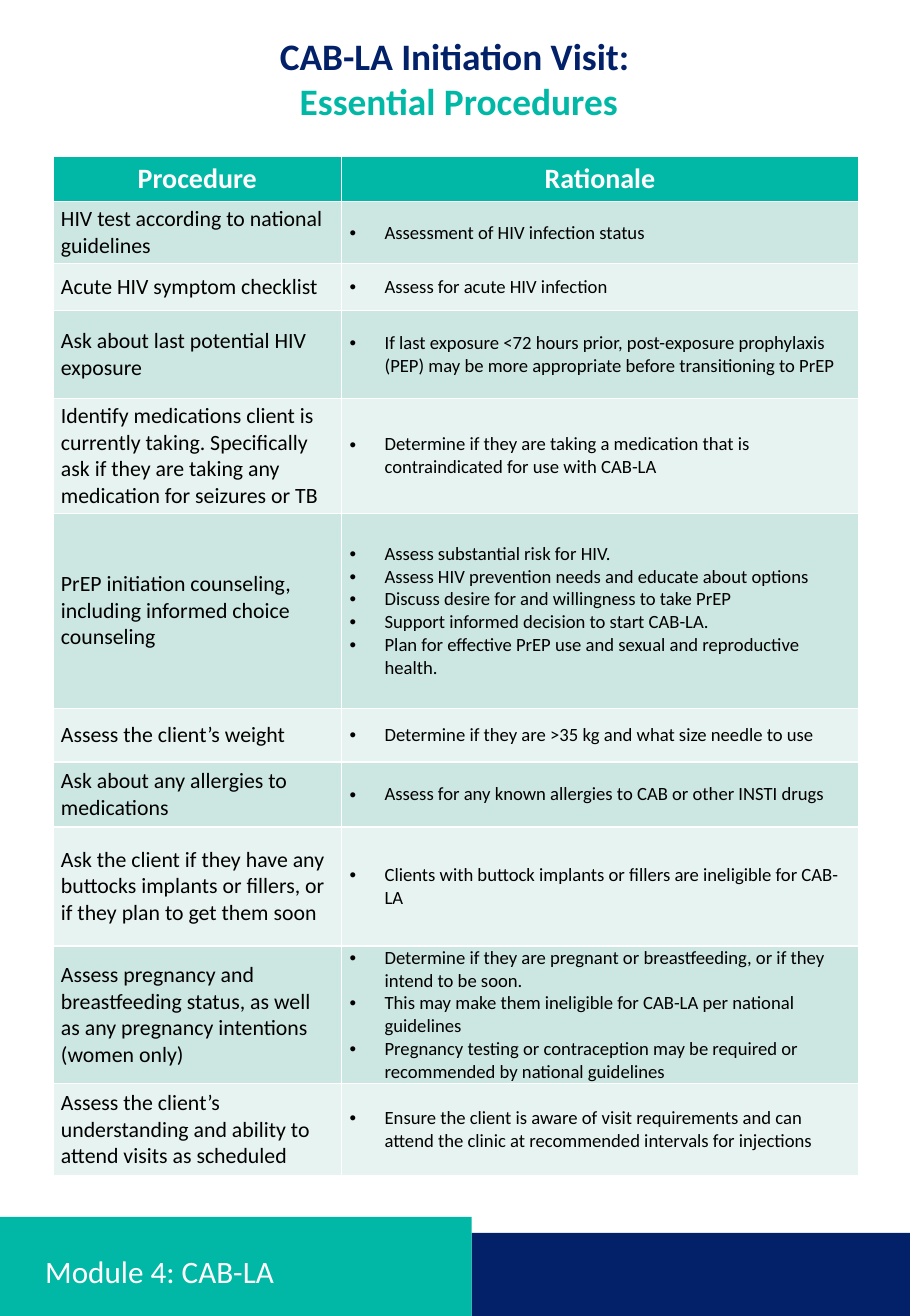
from pptx import Presentation
from pptx import util as u
from pptx.dml.color import RGBColor
from pptx.enum import shapes, text
from pptx.oxml.ns import qn
from lxml import etree

EMU_PER_PX = 914400 / 112.1
SLIDE_SIZE = u.Emu(7429500), u.Emu(10744200)  # 8 1/8 by 11 3/4 inches
FOOTER_BOTTOM = 1318
FONT = "Calibri"

NAVY = RGBColor(0x02, 0x21, 0x69)
TEAL = RGBColor(0x00, 0xB8, 0xA5)
BANDS = (RGBColor(0xCC, 0xE6, 0xE1), RGBColor(0xE7, 0xF3, 0xF0))
WHITE = RGBColor(0xFF, 0xFF, 0xFF)
BLACK = RGBColor(0x00, 0x00, 0x00)

HEADER_HEIGHT = 46
COLUMN_WIDTHS = (289, 517)
BULLET_INDENT = 35
CELL_MARGIN_X, CELL_MARGIN_Y = 8, 4

# Row height, procedure, rationale bullets
PROCEDURES = [
    (62, "HIV test according to national guidelines",
     ["Assessment of HIV infection status"]),
    (47, "Acute HIV symptom checklist",
     ["Assess for acute HIV infection"]),
    (88, "Ask about last potential HIV exposure",
     ["If last exposure <72 hours prior, post-exposure prophylaxis (PEP) "
      "may be more appropriate before transitioning to PrEP"]),
    (115, "Identify medications client is currently taking. Specifically ask "
          "if they are taking any medication for seizures or TB",
     ["Determine if they are taking a medication that is contraindicated "
      "for use with CAB-LA"]),
    (195, "PrEP initiation counseling, including informed choice counseling",
     ["Assess substantial risk for HIV.",
      "Assess HIV prevention needs and educate about options",
      "Discuss desire for and willingness to take PrEP",
      "Support informed decision to start CAB-LA.",
      "Plan for effective PrEP use and sexual and reproductive health."]),
    (54, "Assess the client’s weight",
     ["Determine if they are >35 kg and what size needle to use"]),
    (65, "Ask about any allergies to medications",
     ["Assess for any known allergies to CAB or other INSTI drugs"]),
    (119, "Ask the client if they have any buttocks implants or fillers, "
          "or if they plan to get them soon",
     ["Clients with buttock implants or fillers are ineligible for CAB-LA"]),
    (138, "Assess pregnancy and breastfeeding status, as well as any "
          "pregnancy intentions (women only)",
     ["Determine if they are pregnant or breastfeeding, or if they intend "
      "to be soon.",
      "This may make them ineligible for CAB-LA per national guidelines",
      "Pregnancy testing or contraception may be required or recommended "
      "by national guidelines"]),
    (92, "Assess the client’s understanding and ability to attend visits "
         "as scheduled",
     ["Ensure the client is aware of visit requirements and can attend the "
      "clinic at recommended intervals for injections"]),
]


def px(length):
    return u.Emu(round(length * EMU_PER_PX))


def style(para, size, color, bold=False, align=text.PP_ALIGN.LEFT):
    para.alignment = align
    font = para.font
    font.name, font.size, font.bold = FONT, u.Pt(size), bold
    font.color.rgb = color


def add_bullet(para):
    props = para._p.get_or_add_pPr()
    props.set("marL", str(px(BULLET_INDENT)))
    props.set("indent", str(-px(BULLET_INDENT)))
    etree.SubElement(props, qn("a:buFont")).set("typeface", "Arial")
    etree.SubElement(props, qn("a:buChar")).set("char", "•")


def add_bar(page, color, left, top, width):
    """Footer bar that reaches down to the slide's bottom edge."""
    bar = page.shapes.add_shape(shapes.MSO_SHAPE.RECTANGLE, px(left), px(top),
                                px(width), px(FOOTER_BOTTOM - top))
    bar.shadow.inherit = False
    bar.fill.solid()
    bar.fill.fore_color.rgb = color
    bar.line.fill.background()


def add_heading(page):
    box = page.shapes.add_textbox(px(68), px(27), px(774), px(112))
    frame = box.text_frame
    frame.word_wrap = True
    frame.margin_top = px(6)
    frame.text = "CAB-LA Initiation Visit:\n Essential Procedures"
    for para, color in zip(frame.paragraphs, (NAVY, TEAL)):
        style(para, 24, color, True, text.PP_ALIGN.CENTER)


def fill_cell(cell, lines, fill, margin_y=CELL_MARGIN_Y):
    cell.fill.solid()
    cell.fill.fore_color.rgb = fill
    cell.vertical_anchor = text.MSO_ANCHOR.MIDDLE
    cell.margin_left = cell.margin_right = px(CELL_MARGIN_X)
    cell.margin_top = cell.margin_bottom = px(margin_y)
    cell.text_frame.text = "\n".join(lines)
    return cell.text_frame.paragraphs


def add_procedure_table(page):
    heights = [HEADER_HEIGHT] + [height for height, _, _ in PROCEDURES]
    table = page.shapes.add_table(len(heights), 2, px(53), px(156),
                                  px(sum(COLUMN_WIDTHS)), px(sum(heights))).table
    for column, width in zip(table.columns, COLUMN_WIDTHS):
        column.width = px(width)
    for row, height in zip(table.rows, heights):
        row.height = px(height)

    for column, label in enumerate(("Procedure", "Rationale")):
        for para in fill_cell(table.cell(0, column), [label], TEAL):
            style(para, 18, WHITE, True, text.PP_ALIGN.CENTER)

    for index, (_, procedure, reasons) in enumerate(PROCEDURES):
        band = BANDS[index % 2]
        for para in fill_cell(table.cell(index + 1, 0), [procedure], band):
            style(para, 14, BLACK)
        for para in fill_cell(table.cell(index + 1, 1), reasons, band, 0):
            add_bullet(para)
            style(para, 12, BLACK)


def place_module_title(page):
    """Set the title in the footer, in front of the bars."""
    title = page.shapes.title
    title.left, title.top, title.width, title.height = map(px, (34, 1247, 402, 56))
    frame = title.text_frame
    frame.text = "Module 4: CAB-LA"
    frame.auto_size = text.MSO_AUTO_SIZE.NONE
    frame.vertical_anchor = text.MSO_ANCHOR.MIDDLE
    para = frame.paragraphs[0]
    para.line_spacing = 0.9
    style(para, 20, WHITE)
    title.element.getparent().append(title.element)


def main():
    deck = Presentation()
    deck.slide_width, deck.slide_height = SLIDE_SIZE
    page = deck.slides.add_slide(deck.slide_layouts.get_by_name("Title Only"))
    add_bar(page, NAVY, 472, 1234, 439)
    add_bar(page, TEAL, 0, 1218, 472)
    add_heading(page)
    add_procedure_table(page)
    place_module_title(page)
    deck.save("out.pptx")


if __name__ == "__main__":
    main()
